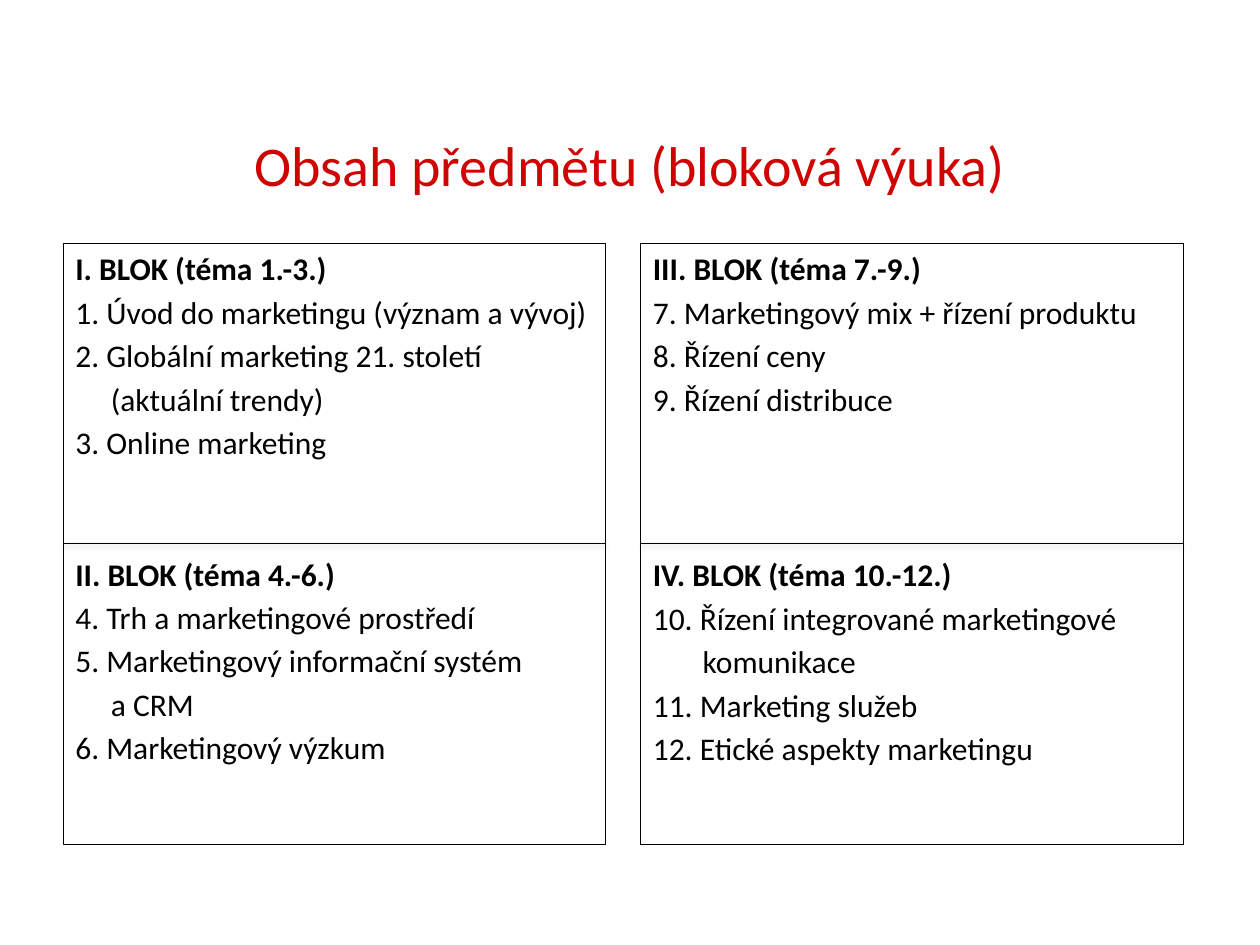
import pptx
import pptx.dml.color
import pptx.enum.shapes
import pptx.enum.text
import pptx.oxml
import pptx.util
from pptx.util import Pt

COLORS = {"title": "D10202", "ink": "000000"}
FONT = "Calibri"
LINE_PITCH = 25.2
LINE_GAP = 3.2
COLUMN_TOP, COLUMN_WIDTH, COLUMN_HEIGHT = 139, 310, 343.5
DIVIDER_Y = 310.3
SHADOW = (
    '<a:effectLst xmlns:a="http://schemas.openxmlformats.org/drawingml/2006/main">'
    f'<a:outerShdw blurRad="{Pt(3.1)}" dist="{Pt(1.6)}" dir="5400000" rotWithShape="0">'
    f'<a:srgbClr val="{COLORS["ink"]}"><a:alpha val="38000"/></a:srgbClr>'
    "</a:outerShdw></a:effectLst>"
)

# Each column: left edge, indent of continuation lines, then its two blocks.
# A block is a heading and its lines; True marks a continuation line.
columns = [
    (36, 20.3, [
        ("I. BLOK (téma 1.-3.)", [
            ("1. Úvod do marketingu (význam a vývoj)", False),
            ("2. Globální marketing 21. století", False),
            ("(aktuální trendy)", True),
            ("3. Online marketing", False),
        ]),
        ("II. BLOK (téma 4.-6.)", [
            ("4. Trh a marketingové prostředí", False),
            ("5. Marketingový informační systém", False),
            ("a CRM", True),
            ("6. Marketingový výzkum", False),
        ]),
    ]),
    (366, 28.5, [
        ("III. BLOK (téma 7.-9.)", [
            ("7. Marketingový mix + řízení produktu", False),
            ("8. Řízení ceny", False),
            ("9. Řízení distribuce", False),
        ]),
        ("IV. BLOK (téma 10.-12.)", [
            ("10. Řízení integrované marketingové", False),
            ("komunikace", True),
            ("11. Marketing služeb", False),
            ("12. Etické aspekty marketingu", False),
        ]),
    ]),
]
LINES_TO_SECOND_BLOCK = 7


def set_font(paragraph, size, color, bold=False):
    paragraph.font.name = FONT
    paragraph.font.size = Pt(size)
    paragraph.font.bold = bold
    paragraph.font.color.rgb = pptx.dml.color.RGBColor.from_string(COLORS[color])


def set_thin_line(line):
    line.color.rgb = pptx.dml.color.RGBColor.from_string(COLORS["ink"])
    line.width = Pt(0.25)


deck = pptx.Presentation()
deck.slide_width, deck.slide_height = Pt(720), Pt(540)
slide = deck.slides.add_slide(deck.slide_layouts[5])

title = slide.shapes.title
title.left, title.top, title.width, title.height = Pt(36), Pt(49), Pt(648), Pt(90)
title.text_frame.text = "Obsah předmětu (bloková výuka)"
title.text_frame.vertical_anchor = pptx.enum.text.MSO_ANCHOR.MIDDLE
title.text_frame.paragraphs[0].alignment = pptx.enum.text.PP_ALIGN.CENTER
set_font(title.text_frame.paragraphs[0], 32, "title")

for left, indent, blocks in columns:
    column = slide.shapes.add_textbox(
        Pt(left), Pt(COLUMN_TOP), Pt(COLUMN_WIDTH), Pt(COLUMN_HEIGHT))
    set_thin_line(column.line)
    frame = column.text_frame
    frame.word_wrap = True
    lines_above = 0
    for heading, topics in blocks:
        if lines_above:
            paragraph = frame.add_paragraph()
            skipped = LINES_TO_SECOND_BLOCK - lines_above
            paragraph.space_before = Pt(round(skipped * LINE_PITCH + LINE_GAP, 1))
        else:
            paragraph = frame.paragraphs[0]
        paragraph.text = heading
        set_font(paragraph, 18, "ink", bold=True)
        for topic, continued in topics:
            paragraph = frame.add_paragraph()
            paragraph.text = topic
            paragraph.space_before = Pt(LINE_GAP)
            if continued:
                paragraph._p.get_or_add_pPr().set("marL", str(Pt(indent)))
            set_font(paragraph, 18, "ink")
        lines_above = 1 + len(topics)

    divider = slide.shapes.add_connector(
        pptx.enum.shapes.MSO_CONNECTOR.STRAIGHT,
        Pt(left), Pt(DIVIDER_Y), Pt(left + COLUMN_WIDTH), Pt(DIVIDER_Y))
    set_thin_line(divider.line)
    divider._element.spPr.append(pptx.oxml.parse_xml(SHADOW))

deck.save("out.pptx")
